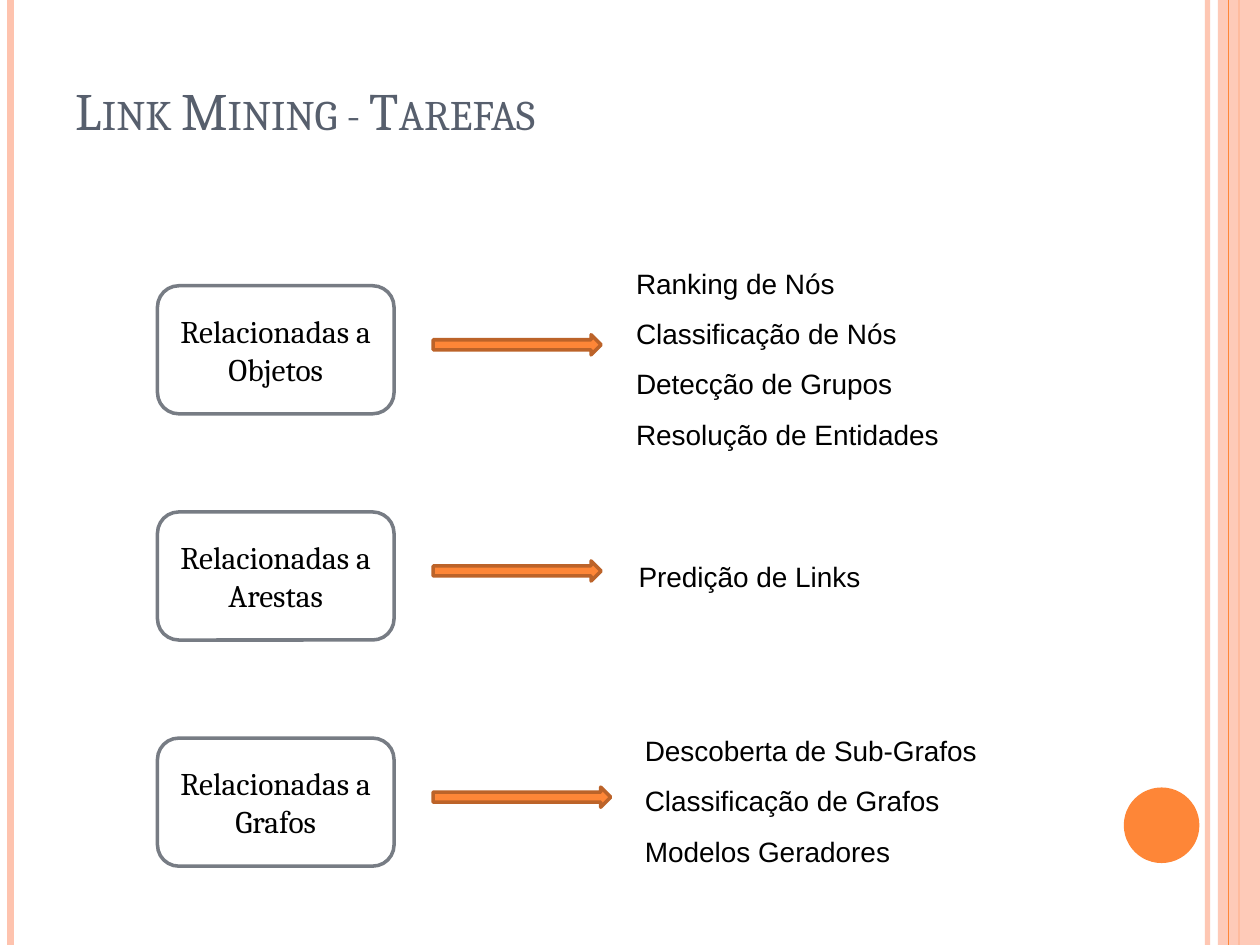
from dataclasses import dataclass

from lxml import etree
from pptx import Presentation
from pptx.dml.color import RGBColor
from pptx.enum import shapes as kinds, text as opts
from pptx.oxml import ns
from pptx.util import Pt


@dataclass(frozen=True)
class Theme:
    ink: str = "000000"
    paper: str = "FFFFFF"
    title: str = "575F6D"
    edge: str = "777C84"
    pale: str = "FEC3AE"
    orange: str = "FE8637"
    rust: str = "BC6329"
    serif: str = "Cambria"
    sans: str = "Arial"
    head: float = 30
    label: float = 18
    item: float = 16


T = Theme()
WIDE, HIGH = 720, 540
FORM = kinds.MSO_SHAPE

# Label, arrow width, items, and the left, top, width, height of the items
ROWS = [
    ("Relacionadas a Objetos", 96,
     ["Ranking de Nós", "Classificação de Nós", "Detecção de Grupos",
      "Resolução de Entidades"], (356.4, 139, 189.4, 120.2)),
    ("Relacionadas a Arestas", 96,
     ["Predição de Links"], (357.8, 306.7, 142.6, 36)),
    ("Relacionadas a Grafos", 101.5,
     ["Descoberta de Sub-Grafos", "Classificação de Grafos",
      "Modelos Geradores"], (361.4, 406.1, 206.6, 94.3)),
]
TOP, STEP = 163.3, 129.25


def fade(part, share):
    """Make the first solid colour of a shape or line partly clear."""
    color = next(part._element.spPr.iter(ns.qn("a:srgbClr")))
    etree.SubElement(color, ns.qn("a:alpha"), val=str(share * 1000))


def add_run(para, words, font, size, color):
    run = para.add_run()
    run.text = words
    run.font.name = font
    run.font.size = Pt(size)
    run.font.color.rgb = RGBColor.from_string(color)
    return run


def add_shape(slide, form, place, fill, line=None):
    shape = slide.shapes.add_shape(form, *map(Pt, place))
    shape.shadow.inherit = False
    shape.fill.solid()
    shape.fill.fore_color.rgb = RGBColor.from_string(fill)
    if line:
        shape.line.color.rgb = RGBColor.from_string(line)
        shape.line.width = Pt(2)
    else:
        shape.line.fill.background()
    return shape


def add_rule(slide, x, color, width):
    rule = slide.shapes.add_connector(
        kinds.MSO_CONNECTOR.STRAIGHT, Pt(x), 0, Pt(x), Pt(HIGH))
    rule.line.color.rgb = RGBColor.from_string(color)
    rule.line.width = Pt(width)
    etree.SubElement(rule._element.spPr, ns.qn("a:effectLst"))
    return rule


def add_frame(slide):
    fade(add_rule(slide, 690, T.pale, 3), 93)
    add_rule(slide, 6, T.pale, 4.5)
    add_rule(slide, 708, T.orange, 1.5)
    fade(add_shape(slide, FORM.RECTANGLE, (696, 0, 24, HIGH), T.pale), 87)
    add_rule(slide, 702, T.orange, 0.75)
    add_shape(slide, FORM.OVAL, (642.2, 450, 43.2, 43.2), T.orange)


def set_title(slide, words):
    title = slide.shapes.title
    title.left, title.top = Pt(36), Pt(-6)
    title.width, title.height = Pt(588), Pt(90)
    frame = title.text_frame
    frame.auto_size = opts.MSO_AUTO_SIZE.NONE
    frame.vertical_anchor = opts.MSO_ANCHOR.BOTTOM
    para = frame.paragraphs[0]
    para.alignment = opts.PP_ALIGN.LEFT
    run = add_run(para, words, T.serif, T.head, T.title)
    run._r.get_or_add_rPr().set("cap", "small")


def add_label(slide, top, words):
    box = add_shape(slide, FORM.ROUNDED_RECTANGLE, (90, top, 135.2, 73.2),
                    T.paper, T.edge)
    frame = box.text_frame
    frame.word_wrap = True
    frame.vertical_anchor = opts.MSO_ANCHOR.MIDDLE
    para = frame.paragraphs[0]
    para.alignment = opts.PP_ALIGN.CENTER
    add_run(para, words, T.serif, T.label, T.ink)


def add_items(slide, place, items):
    frame = slide.shapes.add_textbox(*map(Pt, place)).text_frame
    frame.word_wrap = False
    frame.auto_size = opts.MSO_AUTO_SIZE.SHAPE_TO_FIT_TEXT
    for i, words in enumerate(items):
        para = frame.add_paragraph() if i else frame.paragraphs[0]
        para.alignment = opts.PP_ALIGN.LEFT
        para.line_spacing = 1.5
        add_run(para, words, T.sans, T.item, T.ink)


def main():
    deck = Presentation()
    deck.slide_width, deck.slide_height = Pt(WIDE), Pt(HIGH)
    slide = deck.slides.add_slide(deck.slide_layouts[5])

    # Side bands and title
    add_frame(slide)
    set_title(slide, "Link Mining - Tarefas")

    # One row for each group of tasks
    for i, (label, reach, items, place) in enumerate(ROWS):
        top = TOP + i * STEP
        add_label(slide, top, label)
        add_shape(slide, FORM.RIGHT_ARROW, (247.5, top + 28, reach, 11.5),
                  T.orange, T.rust)
        add_items(slide, place, items)

    deck.save("out.pptx")


if __name__ == "__main__":
    main()
